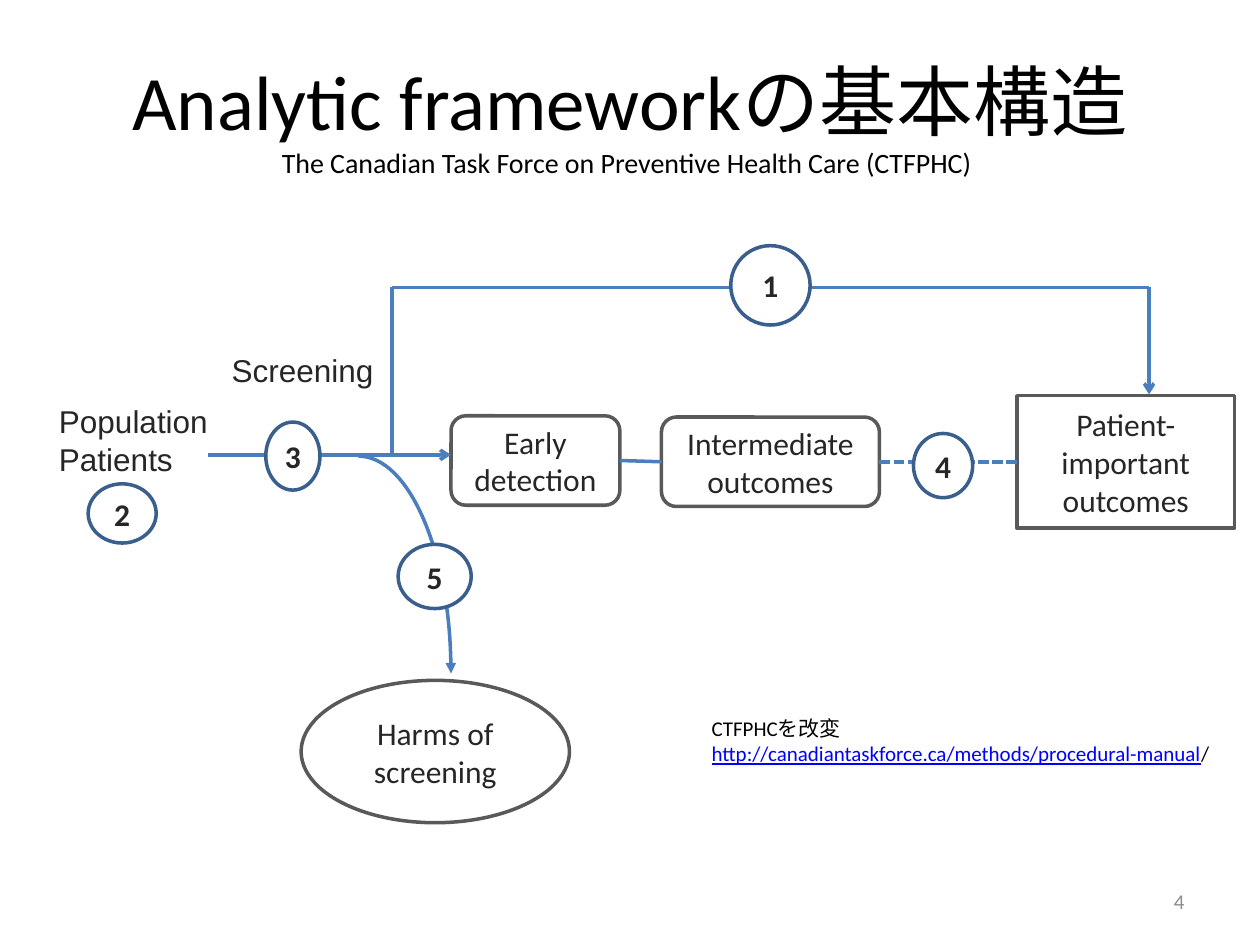
from itertools import pairwise
from lxml import etree
from pptx import Presentation
from pptx import util as u
from pptx.dml.color import RGBColor
from pptx.enum import dml, shapes, text
from pptx.oxml.ns import qn

BLACK = RGBColor(0x00, 0x00, 0x00)
WHITE = RGBColor(0xFF, 0xFF, 0xFF)
INK = RGBColor(0x26, 0x26, 0x26)
GREY = RGBColor(0x59, 0x59, 0x59)
PALE_GREY = RGBColor(0x8C, 0x8C, 0x8C)
BLUE = RGBColor(0x4B, 0x7E, 0xBC)
DARK_BLUE = RGBColor(0x3A, 0x5F, 0x8C)
LINK_BLUE = RGBColor(0x00, 0x00, 0xFF)

SLIDE_WIDTH, SLIDE_HEIGHT = u.Inches(10), u.Inches(7.5)
CELL = SLIDE_WIDTH // 100  # the slide is a grid of 100 columns and 75 rows
AUTO_SHAPE = shapes.MSO_SHAPE


def to_length(origin, cells):
    """Turn (x, y) or (x, y, width, height) in cells from origin into lengths."""
    offsets = (*origin, 0, 0)
    return [round((offset + cell) * CELL) for offset, cell in zip(offsets, cells)]


def style_font(font, size, color, name="Calibri", bold=False):
    font.name, font.size, font.bold = name, u.Pt(size), bold
    font.color.rgb = color


def write(frame, lines, alignment, size, color, **style):
    frame.word_wrap = True
    frame.text = "\n".join(lines)
    for paragraph in frame.paragraphs:
        paragraph.alignment = alignment
        style_font(paragraph.font, size, color, **style)


def add_label(slide, origin, cells, lines, size, color,
              alignment=text.PP_ALIGN.LEFT, **style):
    box = slide.shapes.add_textbox(*to_length(origin, cells))
    write(box.text_frame, lines, alignment, size, color, **style)
    return box.text_frame


def add_node(slide, origin, cells, kind, lines, outline=GREY, bold=False):
    node = slide.shapes.add_shape(kind, *to_length(origin, cells))
    node.shadow.inherit = False
    node.fill.solid()
    node.fill.fore_color.rgb = WHITE
    node.line.color.rgb = outline
    node.line.width = u.Pt(2)
    write(node.text_frame, lines, text.PP_ALIGN.CENTER, 18, INK, bold=bold)
    node.text_frame.vertical_anchor = text.MSO_ANCHOR.MIDDLE
    return node


def add_badge(slide, origin, cells, number):
    """Add a numbered circle that marks a key question."""
    badge = add_node(slide, origin, cells, AUTO_SHAPE.OVAL, [number], DARK_BLUE, True)
    frame = badge.text_frame
    frame.margin_left = frame.margin_right = 0
    frame.margin_top = frame.margin_bottom = 0


def style_line(line, arrowhead=None):
    line.color.rgb = BLUE
    line.width = u.Pt(2)
    if arrowhead:
        etree.SubElement(line._get_or_add_ln(), qn("a:tailEnd"), type=arrowhead)


def add_line(slide, origin, start, end, arrowhead=None):
    connector = slide.shapes.add_connector(
        shapes.MSO_CONNECTOR.STRAIGHT, *to_length(origin, start), *to_length(origin, end))
    style_line(connector.line, arrowhead)
    etree.SubElement(connector._element.spPr, qn("a:effectLst"))
    return connector


def join(slide, left_node, right_node):
    connector = add_line(slide, (0, 0), (0, 0), (1, 1))
    connector.begin_connect(left_node, 3)
    connector.end_connect(right_node, 1)
    return connector


def add_heading(slide, heading, subtitle):
    paragraph = slide.shapes.title.text_frame.paragraphs[0]
    paragraph.alignment = text.PP_ALIGN.CENTER
    run = paragraph.add_run()
    run.text = heading
    style_font(run.font, 44, BLACK)
    paragraph.add_line_break()
    run = paragraph.add_run()
    run.text = subtitle
    style_font(run.font, 16, BLACK)


def add_framework(slide, origin):
    add_label(slide, origin, (0.7, 12.4, 17.3, 7.1), ["Population", "Patients"],
              18, INK, name="Arial")
    add_label(slide, origin, (14.4, 8.4, 14.2, 4), ["Screening"], 18, INK, name="Arial")

    early = add_node(slide, origin, (32.8, 14, 13.4, 7.1),
                     AUTO_SHAPE.ROUNDED_RECTANGLE, ["Early", "detection"])
    intermediate = add_node(slide, origin, (49.5, 14.1, 17.3, 7.1),
                            AUTO_SHAPE.ROUNDED_RECTANGLE, ["Intermediate", "outcomes"])
    important = add_node(slide, origin, (77.7, 12.4, 17.3, 10.5),
                         AUTO_SHAPE.RECTANGLE, ["Patient-important outcomes"])
    add_node(slide, origin, (20.9, 35, 21.3, 11.3),
             AUTO_SHAPE.OVAL, ["Harms of screening"])

    add_line(slide, origin, (13.5, 17.1), (32.8, 17.1), "arrow")
    join(slide, early, intermediate)
    join(slide, intermediate, important).line.dash_style = dml.MSO_LINE.SQUARE_DOT

    direct_route = [(28.1, 17.1), (28.1, 3.8), (88.2, 3.8), (88.2, 12.3)]
    for start, end in pairwise(direct_route):
        add_line(slide, origin, start, end, "arrow" if end == direct_route[-1] else None)

    harm_arc = slide.shapes.add_shape(
        AUTO_SHAPE.ARC, *to_length(origin, (18.1, 17.2, 14.7, 34.5)))
    harm_arc.shadow.inherit = False
    harm_arc.fill.background()
    style_line(harm_arc.line, "triangle")

    badges = [(55, 0.5, 6.3, 6.3), (4, 19.4, 5.4, 4.7), (18.1, 14.5, 4.3, 5.4),
              (69.5, 15.4, 4.7, 5.1), (28.6, 24.2, 5.8, 5.1)]
    for number, cells in enumerate(badges, start=1):
        add_badge(slide, origin, cells, str(number))


def add_credit(slide, origin):
    frame = add_label(slide, origin, (0, 0, 41.7, 5), ["CTFPHCを改変", ""], 12, BLACK)
    address, slash = (frame.paragraphs[1].add_run() for _ in range(2))
    address.text = "http://canadiantaskforce.ca/methods/procedural-manual"
    address.font.color.rgb = LINK_BLUE
    address.font.underline = True
    slash.text = "/"


def add_page_number(slide, origin, number):
    frame = add_label(slide, origin, (0, 0, 23.3, 4), [number], 12, PALE_GREY,
                      text.PP_ALIGN.RIGHT)
    frame.vertical_anchor = text.MSO_ANCHOR.MIDDLE


def main():
    presentation = Presentation()
    presentation.slide_width, presentation.slide_height = SLIDE_WIDTH, SLIDE_HEIGHT
    slide = presentation.slides.add_slide(presentation.slide_layouts.get_by_name("Title Only"))
    add_heading(slide, "Analytic frameworkの基本構造",
                "The Canadian Task Force on Preventive Health Care (CTFPHC) ")
    add_framework(slide, (3, 19))
    add_credit(slide, (55.5, 56.3))
    add_page_number(slide, (71.7, 69.5), "4")
    presentation.save("out.pptx")


if __name__ == "__main__":
    main()
